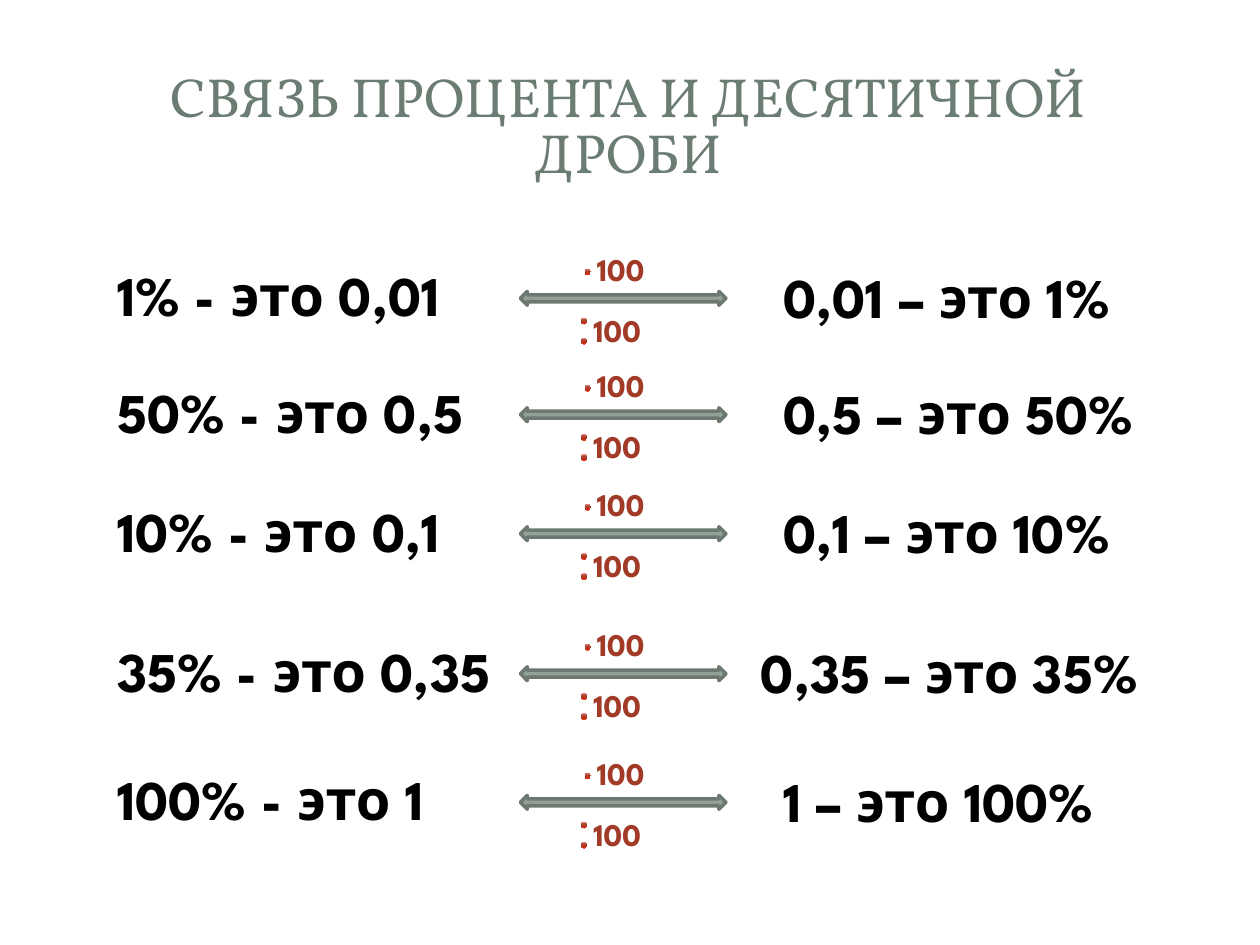
from copy import deepcopy

from pptx import Presentation
from pptx.dml.color import RGBColor
from pptx.enum.shapes import MSO_SHAPE
from pptx.enum.text import MSO_ANCHOR, MSO_AUTO_SIZE, PP_ALIGN
from pptx.util import Pt

ARROW, OVAL = MSO_SHAPE.LEFT_RIGHT_ARROW, MSO_SHAPE.OVAL
MIDDLE, CENTER = MSO_ANCHOR.MIDDLE, PP_ALIGN.CENTER
GROW, FIXED = MSO_AUTO_SIZE.SHAPE_TO_FIT_TEXT, MSO_AUTO_SIZE.NONE

BLACK = RGBColor(0x00, 0x00, 0x00)
GREEN = RGBColor(0x6B, 0x7D, 0x72)
SAGE = RGBColor(0x93, 0xA2, 0x99)
EDGE = RGBColor(0x6D, 0x78, 0x71)
RED = RGBColor(0xA2, 0x3A, 0x28)
SHADES = [(0, "EF8E85"), (25, "C1584A"), (38, "B04839"), (55, "AD3A26"),
          (80, "BA2F18"), (88, "CD2C10"), (100, "F63D1F")]

TITLE = "СВЯЗЬ ПРОЦЕНТА И ДЕСЯТИЧНОЙ ДРОБИ"
# arrow top, left text and its width, right text, its left and its width
ROWS = [
    (166.5, "1% - это 0,01", 222.5, "0,01 – это 1%", 440.6, 225.4),
    (233, "50% - это 0,5", 222.5, "0,5 – это 50%", 440.6, 225.4),
    (301, "10% - это 0,1", 222.5, "0,1 – это 10%", 440.6, 225.4),
    (381, "35% - это 0,35", 240.5, "0,35 – это 35%", 427.7, 243.4),
    (454.5, "100% - это 1", 213.8, "1 – это 100%", 440.6, 216),
]
FACTOR = "100"
TIMES_X, OVER_X = 334, 332
DOT = 3.6


def add_text(text, x, y, w, h, size, color):
    box = slide.shapes.add_textbox(Pt(x), Pt(y), Pt(w), Pt(h))
    frame = box.text_frame
    frame.word_wrap = False
    frame.auto_size = GROW
    para = frame.paragraphs[0]
    para.text = text
    font = para.font
    font.name, font.size, font.bold = "League Spartan", Pt(size), True
    font.color.rgb = color


def add_arrow(y):
    arrow = slide.shapes.add_shape(ARROW, Pt(297.4), Pt(y), Pt(117.4), Pt(7.9))
    arrow.shadow.inherit = False
    arrow.fill.solid()
    arrow.fill.fore_color.rgb = SAGE
    arrow.line.color.rgb = EDGE
    arrow.line.width = Pt(2)


def add_dot(x, y):
    dot = slide.shapes.add_shape(OVAL, Pt(x), Pt(y), Pt(DOT), Pt(DOT))
    dot.shadow.inherit = False
    dot.line.fill.background()
    fill = dot.fill
    fill.gradient()
    fill.gradient_angle = 270
    # Extend the preset gradient to the full list of stops
    stops = fill.gradient_stops
    first = dot.element.spPr.xpath("./a:gradFill/a:gsLst/a:gs")[0]
    for _ in range(len(SHADES) - len(stops)):
        first.addnext(deepcopy(first))
    for stop, (place, shade) in zip(fill.gradient_stops, SHADES):
        stop.position = place / 100
        stop.color.rgb = RGBColor.from_string(shade)


deck = Presentation()
deck.slide_width, deck.slide_height = Pt(720), Pt(540)
slide = deck.slides.add_slide(deck.slide_layouts[5])

title = slide.shapes.title
title.left, title.top, title.width, title.height = Pt(34), Pt(32.4), Pt(650), Pt(82)
frame = title.text_frame
frame.auto_size = FIXED
frame.word_wrap = True
frame.vertical_anchor = MIDDLE
frame.margin_left = frame.margin_right = Pt(30)
para = frame.paragraphs[0]
para.text = TITLE
para.alignment = CENTER
para.line_spacing = 0.86
para.font.name, para.font.size = "Vollkorn", Pt(31.5)
para.font.color.rgb = GREEN

for y, left, left_w, right, right_x, right_w in ROWS:
    add_text(left, 59.8, y - 21, left_w, 46, 32, BLACK)
    add_text(right, right_x, y - 20.3, right_w, 46, 32, BLACK)
    add_arrow(y)
    add_text(FACTOR, TIMES_X, y - 27.4, 44.6, 29, 18, RED)
    add_dot(TIMES_X, y - 13)
    add_text(FACTOR, OVER_X, y + 7.4, 44.6, 29, 18, RED)
    for drop in (15.1, 26.6):
        add_dot(OVER_X, y + drop)

deck.save("out.pptx")
